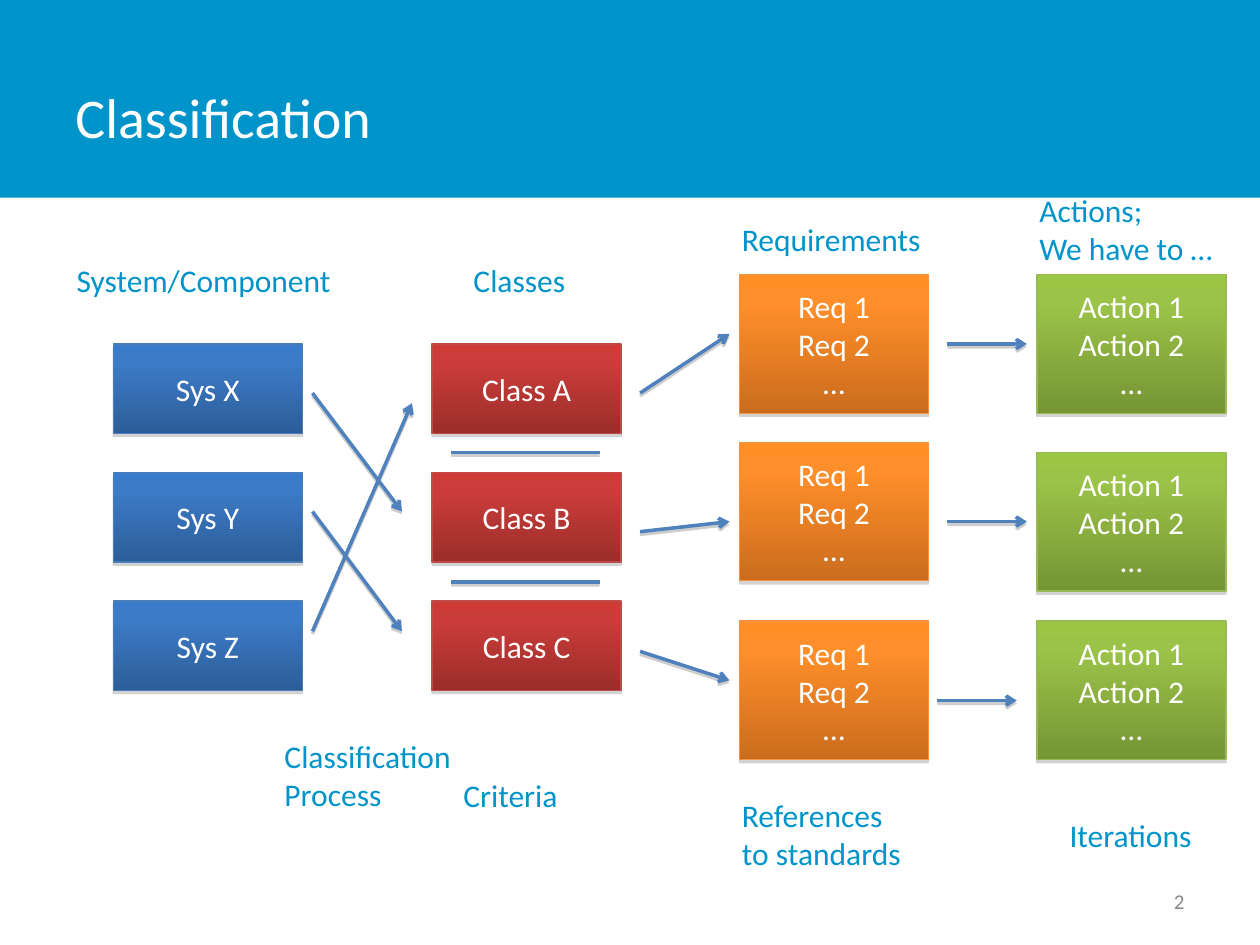
from dataclasses import dataclass

from lxml import etree
from pptx import Presentation
from pptx.dml.color import RGBColor
from pptx.enum.shapes import MSO_CONNECTOR, MSO_SHAPE
from pptx.enum.text import MSO_ANCHOR, MSO_AUTO_SIZE, PP_ALIGN
from pptx.oxml.ns import qn
from pptx.shapes.base import BaseShape
from pptx.slide import Slide
from pptx.text.text import TextFrame
from pptx.util import Inches, Pt

RECTANGLE = MSO_SHAPE.RECTANGLE
STRAIGHT = MSO_CONNECTOR.STRAIGHT
MIDDLE, TOP = MSO_ANCHOR.MIDDLE, MSO_ANCHOR.TOP
LEFT, CENTER, RIGHT = PP_ALIGN.LEFT, PP_ALIGN.CENTER, PP_ALIGN.RIGHT
FIT_SHAPE, NO_FIT = MSO_AUTO_SIZE.SHAPE_TO_FIT_TEXT, MSO_AUTO_SIZE.NONE


@dataclass(frozen=True)
class Palette:
    stops: tuple[str, str, str]
    border: str


@dataclass(frozen=True)
class Theme:
    font: str = "Calibri"
    brand: str = "0094CA"
    white: str = "FFFFFF"
    muted: str = "898989"
    arrow: str = "4F81BD"
    shadow: str = "808080"
    blue: Palette = Palette(("3A7CCB", "3C7BC7", "2C5D98"), "4A7EBB")
    red: Palette = Palette(("CE3B37", "CB3D3A", "9B2D2A"), "BE4B48")
    orange: Palette = Palette(("FF8F26", "FF8F2A", "CB6C1D"), "F69240")
    green: Palette = Palette(("9CC746", "9BC348", "769535"), "98B954")
    title_size: int = 32
    body_size: int = 18
    number_size: int = 12


@dataclass(frozen=True)
class Column:
    left: float
    tops: tuple[float, ...]
    height: float
    texts: tuple[str, ...]
    palette: Palette


@dataclass(frozen=True)
class Label:
    text: str
    left: float
    top: float
    width: float
    height: float
    color: str
    size: int
    align: PP_ALIGN = LEFT
    anchor: MSO_ANCHOR = TOP
    wrap: bool = False


@dataclass(frozen=True)
class Line:
    start: tuple[float, float]
    end: tuple[float, float]
    arrow: bool = True


THEME = Theme()
BOX_WIDTH = 1.5
SMALL_TOPS = tuple(2.73 + 1.02 * row for row in range(3))

COLUMNS = (
    Column(0.9, SMALL_TOPS, 0.71, ("Sys X", "Sys Y", "Sys Z"), THEME.blue),
    Column(3.43, SMALL_TOPS, 0.71, ("Class A", "Class B", "Class C"), THEME.red),
    Column(5.87, (2.18, 3.51, 4.93), 1.1, ("Req 1\nReq 2\n…",) * 3, THEME.orange),
    Column(8.23, (2.18, 3.59, 4.93), 1.1, ("Action 1\nAction 2\n…",) * 3, THEME.green),
)

CAPTIONS = (
    ("System/Component", 0.51, 2.02, 2.25, 0.4),
    ("Classes", 3.66, 2.02, 0.94, 0.4),
    ("Requirements", 5.79, 1.7, 1.65, 0.4),
    ("Actions;\nWe have to …", 8.15, 1.47, 1.65, 0.71),
    ("Classification\nProcess", 2.16, 5.8, 1.54, 0.71),
    ("Criteria", 3.58, 6.11, 0.96, 0.4),
    ("References\vto standards", 5.79, 6.27, 1.48, 0.71),
    ("Iterations", 8.39, 6.43, 1.19, 0.4),
)

LINES = (
    Line((2.48, 3.12), (3.19, 4.06)),
    Line((2.48, 4.06), (3.19, 5.01)),
    Line((2.48, 5.01), (3.27, 3.2)),
    Line((5.08, 3.12), (5.79, 2.65)),
    Line((5.08, 4.22), (5.79, 4.14)),
    Line((5.08, 5.17), (5.79, 5.4)),
    Line((7.52, 2.73), (8.15, 2.73)),
    Line((7.52, 4.14), (8.15, 4.14)),
    Line((7.44, 5.56), (8.07, 5.56)),
    Line((3.58, 3.59), (4.76, 3.59), arrow=False),
    Line((3.58, 4.62), (4.76, 4.62), arrow=False),
)


def rgb(color: str) -> RGBColor:
    return RGBColor.from_string(color)


def write_text(frame: TextFrame, text: str, color: str, size: int, align: PP_ALIGN) -> None:
    frame.text = text
    for paragraph in frame.paragraphs:
        paragraph.alignment = align
        for run in paragraph.runs:
            run.font.name = THEME.font
            run.font.size = Pt(size)
            run.font.color.rgb = rgb(color)


def add_color(parent: etree._Element, color: str) -> etree._Element:
    return etree.SubElement(parent, qn("a:srgbClr"), val=color)


def add_shadow(effects: etree._Element, distance: float, opacity: int) -> None:
    shadow = etree.SubElement(effects, qn("a:outerShdw"), blurRad="0", dist=str(Pt(distance)),
                              dir="5400000", rotWithShape="0")
    etree.SubElement(add_color(shadow, THEME.shadow), qn("a:alpha"), val=str(opacity * 1000))


def fill_gradient(shape: BaseShape, colors: tuple[str, str, str]) -> None:
    shape.fill.gradient()
    shape.fill.gradient_angle = 270
    stop_list = shape._element.spPr.find(".//" + qn("a:gsLst"))
    for stop in list(stop_list):
        stop_list.remove(stop)
    for position, color in zip((0, 20, 100), colors):
        add_color(etree.SubElement(stop_list, qn("a:gs"), pos=str(position * 1000)), color)


def add_banner(slide: Slide) -> None:
    banner = slide.shapes.add_shape(RECTANGLE, 0, 0, Inches(10), Inches(1.57))
    banner.shadow.inherit = False
    banner.fill.solid()
    banner.fill.fore_color.rgb = rgb(THEME.brand)
    banner.line.fill.background()


def add_column(slide: Slide, column: Column) -> None:
    for top, text in zip(column.tops, column.texts):
        box = slide.shapes.add_shape(RECTANGLE, Inches(column.left), Inches(top),
                                     Inches(BOX_WIDTH), Inches(column.height))
        fill_gradient(box, column.palette.stops)
        box.line.color.rgb = rgb(column.palette.border)
        box.line.width = Pt(0.75)
        box.shadow.inherit = False
        add_shadow(box._element.spPr.find(qn("a:effectLst")), 1.8, 35)
        box.text_frame.vertical_anchor = MIDDLE
        write_text(box.text_frame, text, THEME.white, THEME.body_size, CENTER)


def add_label(slide: Slide, label: Label) -> None:
    box = slide.shapes.add_textbox(Inches(label.left), Inches(label.top),
                                   Inches(label.width), Inches(label.height))
    frame = box.text_frame
    frame.word_wrap = label.wrap
    frame.auto_size = NO_FIT if label.wrap else FIT_SHAPE
    frame.vertical_anchor = label.anchor
    write_text(frame, label.text, label.color, label.size, label.align)


def add_line(slide: Slide, line: Line) -> None:
    connector = slide.shapes.add_connector(STRAIGHT, *map(Inches, line.start + line.end))
    connector.line.color.rgb = rgb(THEME.arrow)
    connector.line.width = Pt(2)
    properties = connector._element.spPr
    if line.arrow:
        etree.SubElement(properties.find(qn("a:ln")), qn("a:tailEnd"), type="arrow")
    add_shadow(etree.SubElement(properties, qn("a:effectLst")), 1.6, 38)


def main() -> None:
    presentation = Presentation()
    presentation.slide_width = Inches(10)
    presentation.slide_height = Inches(7.5)
    slide = presentation.slides.add_slide(presentation.slide_layouts[6])

    add_banner(slide)
    add_label(slide, Label("Classification", 0.5, 0.3, 7.81, 1.25, THEME.white,
                           THEME.title_size, anchor=MIDDLE, wrap=True))
    add_label(slide, Label("2", 7.17, 6.95, 2.33, 0.4, THEME.muted,
                           THEME.number_size, RIGHT, MIDDLE, wrap=True))
    for column in COLUMNS:
        add_column(slide, column)
    for caption in CAPTIONS:
        add_label(slide, Label(*caption, THEME.brand, THEME.body_size))
    for line in LINES:
        add_line(slide, line)
    presentation.save("out.pptx")


if __name__ == "__main__":
    main()
